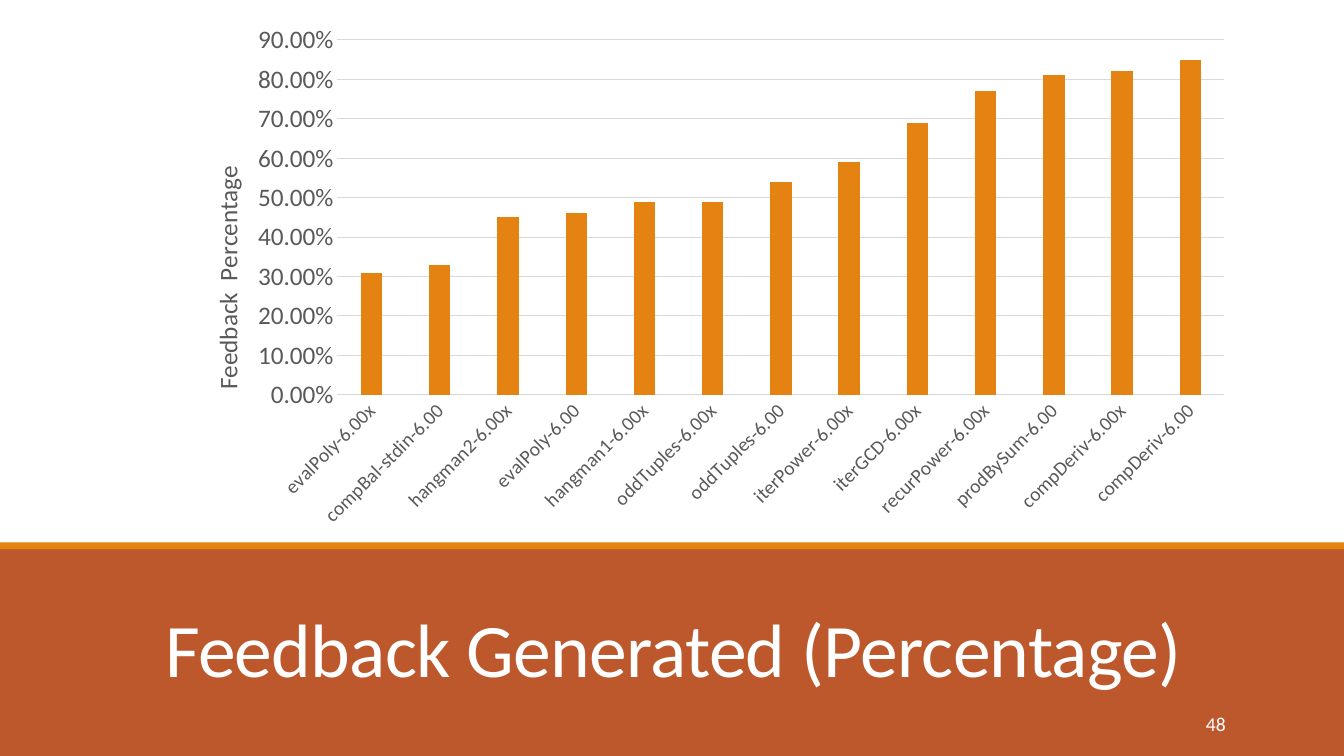
from dataclasses import dataclass

from lxml import etree
from pptx import Presentation
from pptx.chart import data as chart_data
from pptx.dml.color import RGBColor
from pptx.enum import chart as chart_enum, shapes, text
from pptx.oxml import ns
from pptx.util import Cm, Pt

ORANGE, RUST, WHITE = "E48312", "BD582C", "FFFFFF"
GREY, PALE_GREY = "595959", "D9D9D9"
FONT = "Calibri"

FEEDBACK = {
    "evalPoly-6.00x": 0.31,
    "compBal-stdin-6.00": 0.33,
    "hangman2-6.00x": 0.45,
    "evalPoly-6.00": 0.46,
    "hangman1-6.00x": 0.49,
    "oddTuples-6.00x": 0.49,
    "oddTuples-6.00": 0.54,
    "iterPower-6.00x": 0.59,
    "iterGCD-6.00x": 0.69,
    "recurPower-6.00x": 0.77,
    "prodBySum-6.00": 0.81,
    "compDeriv-6.00x": 0.82,
    "compDeriv-6.00": 0.85,
}


@dataclass(frozen=True)
class Frame:
    left: float
    top: float
    width: float
    height: float

    def lengths(self) -> tuple:
        return Cm(self.left), Cm(self.top), Cm(self.width), Cm(self.height)


@dataclass(frozen=True)
class Band:
    frame: Frame
    color: str


@dataclass(frozen=True)
class Label:
    words: str
    frame: Frame
    size: int
    align: text.PP_ALIGN
    anchor: text.MSO_ANCHOR
    inset: float = 0.13
    line_spacing: float = 1.0
    tracking: int = 0


BANDS = [
    Band(Frame(0, 13.77, 33.87, 5.28), RUST),
    Band(Frame(0, 13.67, 33.87, 0.17), ORANGE),
]
LABELS = [
    Label("Feedback Generated (Percentage)", Frame(2.9, 15.16, 28.14, 2.29), 54,
          text.PP_ALIGN.CENTER, text.MSO_ANCHOR.BOTTOM, 0, 0.85, -50),
    Label("48", Frame(26.64, 17.53, 4.5, 1.42), 14,
          text.PP_ALIGN.RIGHT, text.MSO_ANCHOR.MIDDLE),
]
CHART_FRAME = Frame(4.37, 0.36, 27.03, 13.21)


def rgb(value: str) -> RGBColor:
    return RGBColor.from_string(value)


def style_font(font, size: int, color: str) -> None:
    font.name = FONT
    font.size = Pt(size)
    font.bold = False
    font.color.rgb = rgb(color)


def style_line(line) -> None:
    line.color.rgb = rgb(PALE_GREY)
    line.width = Pt(0.75)


def draw_band(page, band: Band) -> None:
    box = page.shapes.add_shape(shapes.MSO_SHAPE.RECTANGLE, *band.frame.lengths())
    box.shadow.inherit = False
    box.fill.solid()
    box.fill.fore_color.rgb = rgb(band.color)
    box.line.fill.background()


def draw_label(page, label: Label) -> None:
    frame = page.shapes.add_textbox(*label.frame.lengths()).text_frame
    frame.word_wrap = True
    frame.vertical_anchor = label.anchor
    frame.margin_top = frame.margin_bottom = Cm(label.inset)
    para = frame.paragraphs[0]
    para.alignment = label.align
    para.line_spacing = label.line_spacing
    span = para.add_run()
    span.text = label.words
    style_font(para.font, label.size, WHITE)
    if label.tracking:
        span.font._element.set("spc", str(label.tracking))


def place(layout_parent, **values) -> None:
    layout = layout_parent.find(ns.qn("c:layout"))
    if layout is None:
        layout = etree.Element(ns.qn("c:layout"))
        text_part = layout_parent.find(ns.qn("c:tx"))
        layout_parent.insert(0 if text_part is None else 1, layout)
    manual = etree.SubElement(layout, ns.qn("c:manualLayout"))
    for name, value in values.items():
        etree.SubElement(manual, ns.qn(f"c:{name}")).set("val", str(value))


def draw_chart(page) -> None:
    data = chart_data.CategoryChartData(number_format="0.00%")
    data.categories = list(FEEDBACK)
    data.add_series("Series 1", list(FEEDBACK.values()))
    chart = page.shapes.add_chart(
        chart_enum.XL_CHART_TYPE.COLUMN_CLUSTERED, *CHART_FRAME.lengths(), data).chart
    chart.has_legend = False
    chart.has_title = False
    style_font(chart.font, 10, "000000")

    plot = chart.plots[0]
    plot.vary_by_categories = False
    plot.gap_width = 219
    plot.overlap = -27
    fill = plot.series[0].format.fill
    fill.solid()
    fill.fore_color.rgb = rgb(ORANGE)

    for axis, size in ((chart.category_axis, 14), (chart.value_axis, 18)):
        axis.major_tick_mark = chart_enum.XL_TICK_MARK.NONE
        axis.minor_tick_mark = chart_enum.XL_TICK_MARK.NONE
        style_font(axis.tick_labels.font, size, GREY)
    style_line(chart.category_axis.format.line)
    body = chart.category_axis._element.find(ns.qn("c:txPr")).find(ns.qn("a:bodyPr"))
    body.set("rot", "-2700000")

    axis = chart.value_axis
    axis.minimum_scale, axis.maximum_scale, axis.major_unit = 0, 0.9, 0.1
    axis.tick_labels.number_format = "0.00%"
    axis.tick_labels.number_format_is_linked = False
    axis.format.line.fill.background()
    style_line(axis.major_gridlines.format.line)
    frame = axis.axis_title.text_frame
    frame.text = "Feedback  Percentage"
    style_font(frame.paragraphs[0].font, 18, GREY)
    frame._element.find(ns.qn("a:bodyPr")).set("rot", "-5400000")

    place(axis.axis_title._element, xMode="edge", yMode="edge", x=0.03, y=0.28)
    place(chart._chartSpace.chart.plotArea, layoutTarget="inner",
          xMode="edge", yMode="edge", x=0.153, y=0.049, w=0.827, h=0.677)


def main() -> None:
    deck = Presentation()
    deck.slide_width, deck.slide_height = Cm(33.87), Cm(19.05)
    page = deck.slides.add_slide(deck.slide_layouts[6])
    for band in BANDS:
        draw_band(page, band)
    draw_chart(page)
    for label in LABELS:
        draw_label(page, label)
    deck.save("out.pptx")


if __name__ == "__main__":
    main()
